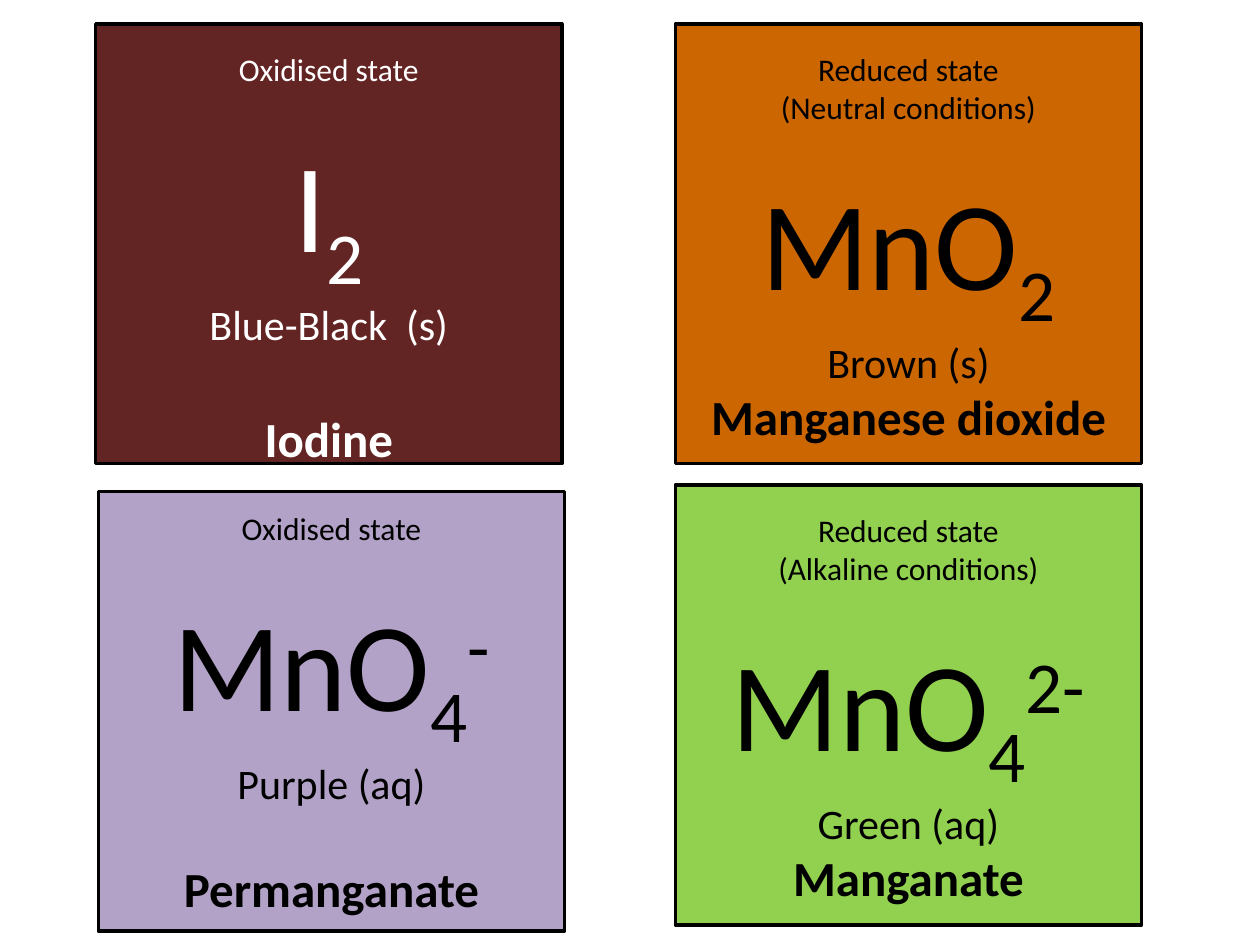
from dataclasses import dataclass

from pptx import Presentation
from pptx.dml.color import RGBColor
from pptx.enum.shapes import MSO_SHAPE
from pptx.enum.text import MSO_AUTO_SIZE, PP_ALIGN
from pptx.util import Pt

BLACK = RGBColor(0x00, 0x00, 0x00)
WHITE = RGBColor(0xFF, 0xFF, 0xFF)
MAROON = RGBColor(0x63, 0x25, 0x23)
ORANGE = RGBColor(0xCC, 0x66, 0x00)
LILAC = RGBColor(0xB3, 0xA2, 0xC7)
GREEN = RGBColor(0x92, 0xD0, 0x50)

FONT = "Calibri"
CARD_WIDTH, CARD_HEIGHT = 266.4, 251.3
TEXT_WIDTH = 289.4
SUBSCRIPT, SUPERSCRIPT = -25000, 30000
FORMULA_GAP = 22


@dataclass
class Card:
    left: float
    top: float
    fill: RGBColor
    color: RGBColor
    state: list
    formula: list
    appearance: str
    name: str
    text_inset: float
    text_height: float
    name_gap: float = 0


CARDS = [
    Card(54.7, 13.7, MAROON, WHITE, ["Oxidised state"],
         [("I", 0), ("2", SUBSCRIPT)],
         "Blue-Black  (s)", "Iodine", 11.5, 239.8, 34),
    Card(385.9, 13.7, ORANGE, BLACK, ["Reduced state", "(Neutral conditions)"],
         [("MnO", 0), ("2", SUBSCRIPT)],
         "Brown (s)", "Manganese dioxide", 11.5, 223.2),
    Card(56.2, 280.8, LILAC, BLACK, ["Oxidised state"],
         [("MnO", 0), ("4", SUBSCRIPT), ("-", SUPERSCRIPT)],
         "Purple (aq)", "Permanganate", 6.5, 230.4, 29.3),
    Card(385.9, 277.2, GREEN, BLACK, ["Reduced state", "(Alkaline conditions)"],
         [("MnO", 0), ("4", SUBSCRIPT), ("2-", SUPERSCRIPT)],
         "Green (aq)", "Manganate", 11.5, 223.2),
]


def add_run(paragraph, text, size, color, bold=False, baseline=0):
    run = paragraph.add_run()
    run.text = text
    run.font.name = FONT
    run.font.size = Pt(size)
    run.font.bold = bold
    run.font.color.rgb = color
    if baseline:
        run.font._element.set("baseline", str(baseline))


def add_paragraph(frame, gap=0):
    first = frame.paragraphs[0]
    paragraph = frame.add_paragraph() if first.runs else first
    paragraph.alignment = PP_ALIGN.CENTER
    paragraph.space_before = Pt(gap)
    return paragraph


def add_card(slide, card):
    panel = slide.shapes.add_shape(
        MSO_SHAPE.RECTANGLE, Pt(card.left), Pt(card.top), Pt(CARD_WIDTH), Pt(CARD_HEIGHT))
    panel.shadow.inherit = False
    panel.fill.solid()
    panel.fill.fore_color.rgb = card.fill
    panel.line.color.rgb = BLACK
    panel.line.width = Pt(2)

    text_box = slide.shapes.add_textbox(
        Pt(card.left + (CARD_WIDTH - TEXT_WIDTH) / 2), Pt(card.top + card.text_inset),
        Pt(TEXT_WIDTH), Pt(card.text_height))
    frame = text_box.text_frame
    frame.word_wrap = True
    frame.auto_size = MSO_AUTO_SIZE.SHAPE_TO_FIT_TEXT

    for line in card.state:
        add_run(add_paragraph(frame), line, 18, card.color)
    formula = add_paragraph(frame, FORMULA_GAP)
    for text, baseline in card.formula:
        add_run(formula, text, 72, card.color, baseline=baseline)
    add_run(add_paragraph(frame), card.appearance, 24, card.color)
    add_run(add_paragraph(frame, card.name_gap), card.name, 28, card.color, bold=True)


def main():
    presentation = Presentation()
    presentation.slide_width = Pt(720)
    presentation.slide_height = Pt(540)
    slide = presentation.slides.add_slide(presentation.slide_layouts[6])
    for card in CARDS:
        add_card(slide, card)
    presentation.save("out.pptx")


if __name__ == "__main__":
    main()
